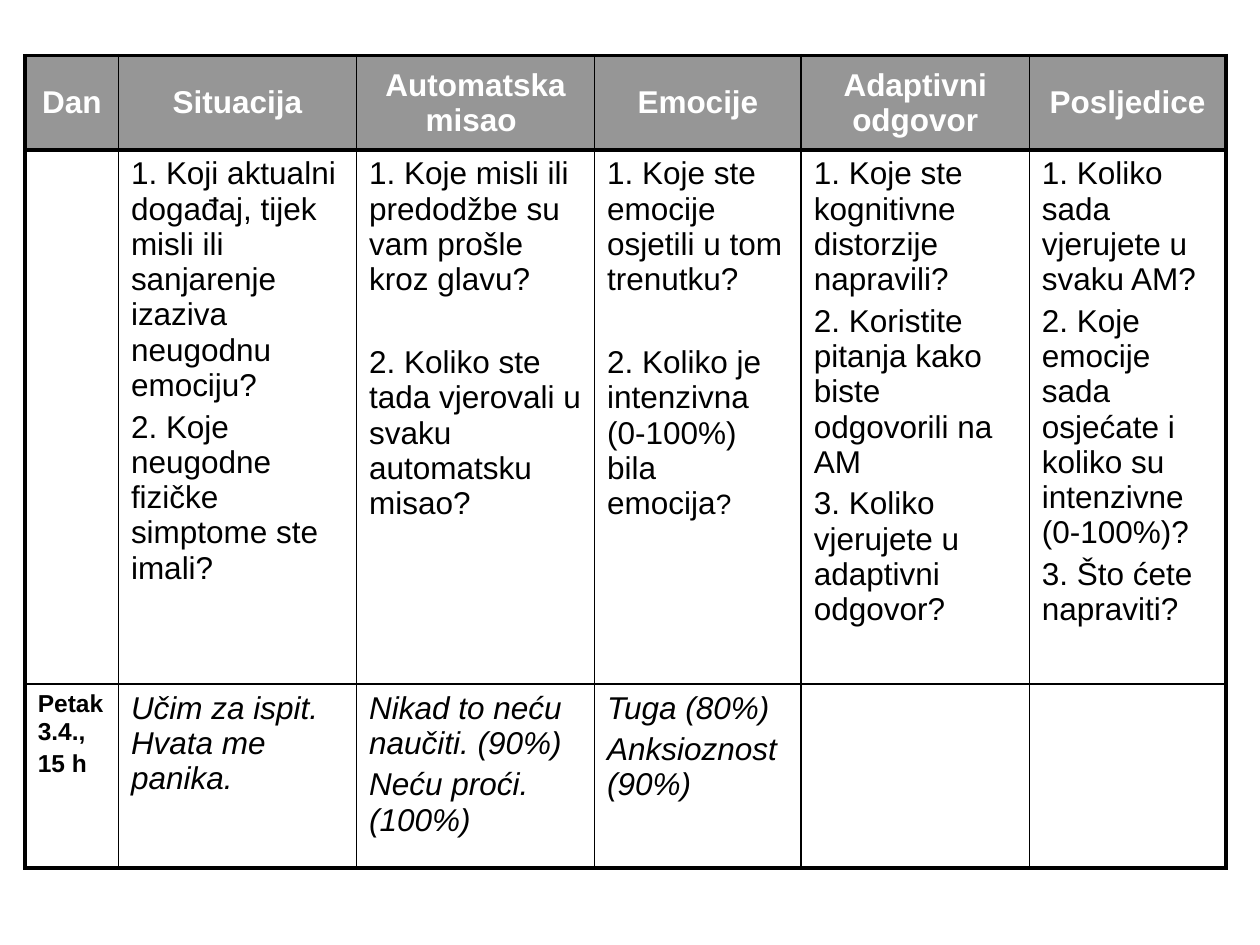
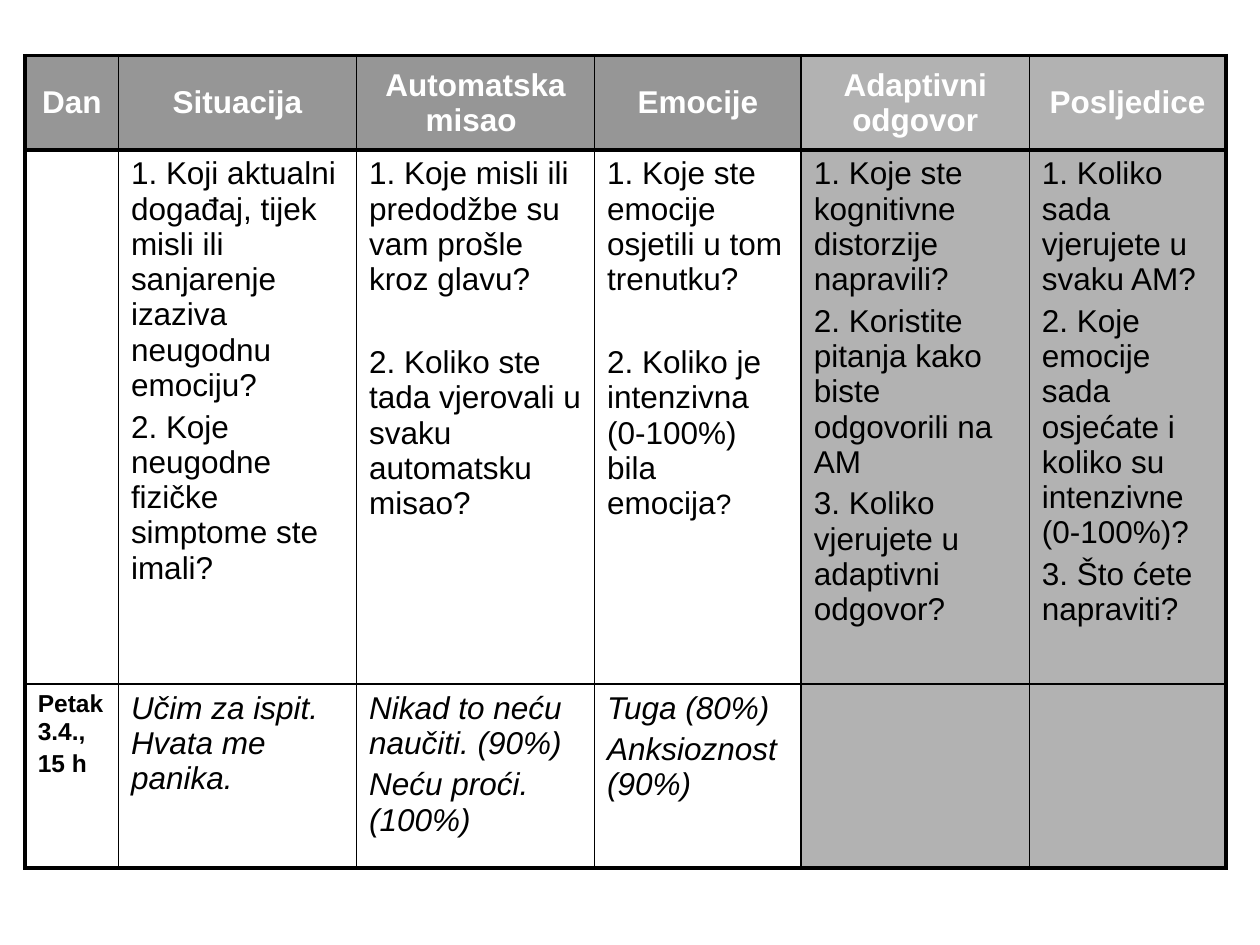
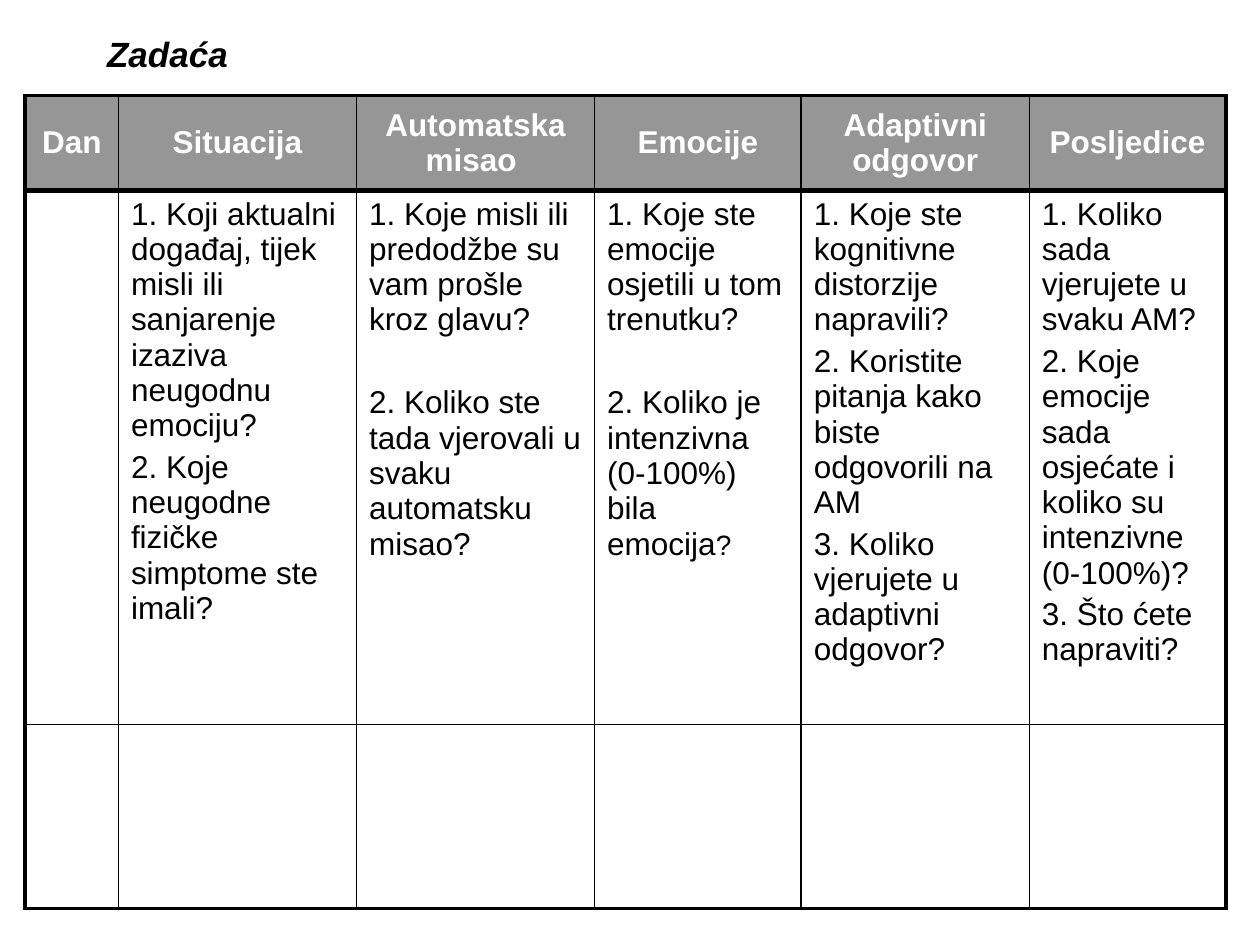
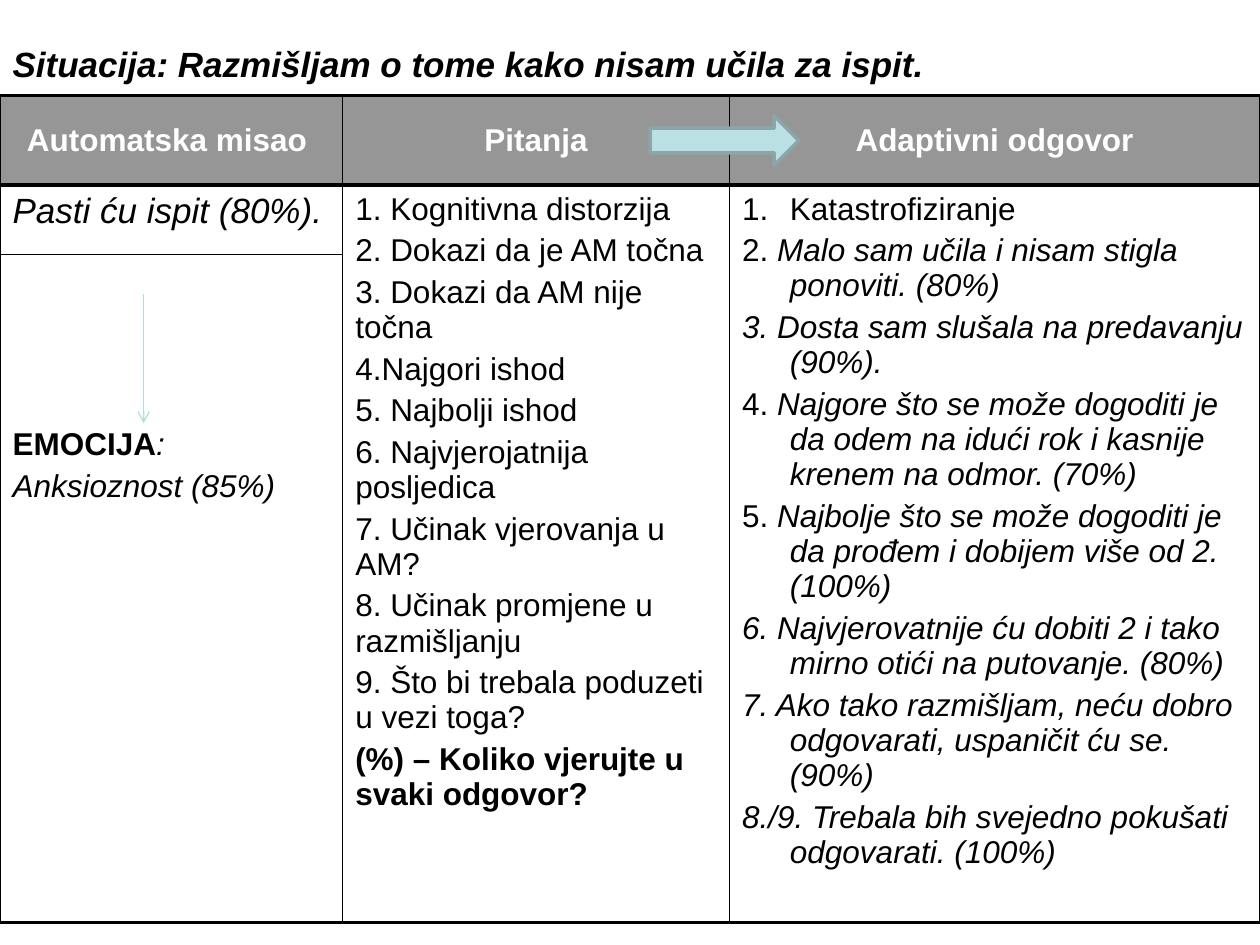
from dataclasses import dataclass
from typing import Optional

from lxml import etree
from pptx import Presentation
from pptx import util as u
from pptx.dml.color import RGBColor
from pptx.enum import shapes, text
from pptx.oxml import ns

# Shared look
COLORS = {
    "black": "000000",
    "white": "FFFFFF",
    "header": "969696",
    "shade": "B2B2B2",
    "arrow_fill": "BBE0E3",
    "arrow_edge": "8AA6A8",
    "thin_arrow": "B6DCDF",
}
FONT = "Arial"
TITLE_ONLY, BLANK = 5, 6
ROW_EDGES = (2.25, 3, 1, 2.25)  # horizontal rules from top to bottom, points
INNER_EDGE = 1
GAP = 27.3  # one skipped line between paragraphs, points
HANG = 0.38


@dataclass(frozen=True)
class Run:
    text: str
    size: float = 18
    bold: bool = False
    italic: bool = False
    color: str = "black"


@dataclass(frozen=True)
class Para:
    runs: tuple[Run, ...]
    before: Optional[float] = None
    hanging: bool = False
    numbered: bool = False
    centered: bool = False


Cell = tuple[Para, ...]


@dataclass(frozen=True)
class Grid:
    left: float
    top: float
    height: float
    cols: tuple[float, ...]
    rows: tuple[float, ...]
    cells: tuple[tuple[Cell, ...], ...]
    side_edge: float = INNER_EDGE
    shaded_cols: tuple[int, ...] = ()
    merged_cols: tuple[int, ...] = ()  # columns joined below the header


def para(content: str, before: Optional[float] = None, **fmt) -> Para:
    return Para((Run(content, **fmt),), before)


def lines(*contents: str, **fmt) -> Cell:
    return tuple(para(c, **fmt) for c in contents)


def header(*names: str) -> tuple[Cell, ...]:
    return tuple((Para((Run(n, bold=True, color="white"),), centered=True),) for n in names)


def answer(number: str, content: str) -> Para:
    """Hanging answer with an upright number and italic wording."""
    return Para((Run(number), Run(content, italic=True)), hanging=True)


def italic_answer(content: str) -> Para:
    return Para((Run(content, italic=True),), hanging=True)


def rgb(name: str) -> RGBColor:
    return RGBColor.from_string(COLORS[name])


# Text
def write(tf, paras: Cell) -> None:
    for i, item in enumerate(paras):
        p = tf.paragraphs[0] if i == 0 else tf.add_paragraph()
        p.alignment = text.PP_ALIGN.CENTER if item.centered else text.PP_ALIGN.LEFT
        before = 0.2 * item.runs[0].size if item.before is None else item.before
        p.space_before = u.Pt(before if i else 0)
        pPr = p._p.get_or_add_pPr()
        if item.hanging:
            pPr.set("marL", str(u.Inches(HANG)))
            pPr.set("indent", str(-u.Inches(HANG)))
        if item.numbered:
            etree.SubElement(pPr, ns.qn("a:buAutoNum"), type="arabicPeriod")
        for run in item.runs:
            r = p.add_run()
            r.text = run.text
            fmt = {"name": FONT, "size": u.Pt(run.size), "bold": run.bold, "italic": run.italic}
            for attr, value in fmt.items():
                setattr(r.font, attr, value)
            r.font.color.rgb = rgb(run.color)


def add_titled_slide(prs, title: str, left: float, top: float, width: float):
    s = prs.slides.add_slide(prs.slide_layouts[TITLE_ONLY])
    sp = s.shapes.title
    place = {"left": left, "top": top, "width": width, "height": 0.44}
    for attr, value in place.items():
        setattr(sp, attr, u.Inches(value))
    tf = sp.text_frame
    frame = {
        "word_wrap": True,
        "vertical_anchor": text.MSO_ANCHOR.TOP,
        "auto_size": text.MSO_AUTO_SIZE.SHAPE_TO_FIT_TEXT,
    }
    for attr, value in frame.items():
        setattr(tf, attr, value)
    write(tf, (para(title, size=20, bold=True, italic=True),))
    return s


# Tables
def set_borders(cell, widths: dict[str, float]) -> None:
    tcPr = cell._tc.get_or_add_tcPr()
    for side, width in widths.items():
        ln = etree.SubElement(tcPr, ns.qn(f"a:ln{side}"), w=str(u.Pt(width)))
        fill = etree.SubElement(ln, ns.qn("a:solidFill"))
        etree.SubElement(fill, ns.qn("a:srgbClr"), val=COLORS["black"])


def add_grid(s, grid: Grid):
    n_rows, n_cols = len(grid.rows), len(grid.cols)
    frame = s.shapes.add_table(
        n_rows, n_cols, u.Inches(grid.left), u.Inches(grid.top),
        u.Inches(sum(grid.cols)), u.Inches(grid.height),
    )
    table = frame.table
    table.first_row = table.horz_banding = False
    for col, width in zip(table.columns, grid.cols):
        col.width = u.Inches(width)
    for row, height in zip(table.rows, grid.rows):
        row.height = u.Inches(height)
    frame.height = u.Inches(grid.height)
    for c in grid.merged_cols:
        table.cell(1, c).merge(table.cell(n_rows - 1, c))

    for r in range(n_rows):
        for c in range(n_cols):
            cell = table.cell(r, c)
            last = r + (cell.span_height if cell.is_merge_origin else 1)
            widths = {
                "L": INNER_EDGE if c else grid.side_edge,
                "R": INNER_EDGE if c < n_cols - 1 else grid.side_edge,
                "T": ROW_EDGES[r],
                "B": ROW_EDGES[last],
            }
            if cell.is_spanned:
                del widths["T"]
            set_borders(cell, widths)
            if c in grid.shaded_cols or r == 0:
                cell.fill.solid()
                cell.fill.fore_color.rgb = rgb("shade" if c in grid.shaded_cols else "header")
            else:
                cell.fill.background()
            cell.vertical_anchor = text.MSO_ANCHOR.MIDDLE if r == 0 else text.MSO_ANCHOR.TOP
            if not cell.is_spanned:
                write(cell.text_frame, grid.cells[r][c])
    return table


# Thought record, used on three slides
RECORD_HEADER = header(
    "Dan", "Situacija", "Automatska misao ", "Emocije", "Adaptivni odgovor", "Posljedice"
)
RECORD_QUESTIONS = (
    (),
    lines(
        "1. Koji aktualni događaj, tijek misli ili sanjarenje izaziva neugodnu emociju?",
        "2. Koje neugodne fizičke simptome ste imali?",
    ),
    (
        para("1. Koje misli ili predodžbe su vam prošle kroz glavu?"),
        para("2. Koliko ste tada vjerovali u svaku automatsku misao?", before=GAP),
    ),
    (
        para("1. Koje ste emocije osjetili u tom trenutku?"),
        Para((Run("2. Koliko je intenzivna (0-100%) bila emocija"), Run("?", size=16)), before=GAP),
    ),
    lines(
        "1. Koje ste kognitivne distorzije napravili?",
        "2. Koristite pitanja kako biste odgovorili na AM",
        "3. Koliko vjerujete u adaptivni odgovor?",
    ),
    lines(
        "1. Koliko sada vjerujete u svaku AM?",
        "2. Koje emocije sada osjećate i koliko su intenzivne (0-100%)?",
        "3. Što ćete napraviti?",
    ),
)
RECORD_EXAMPLE = (
    lines("Petak 3.4.,", "15 h", size=14, bold=True),
    lines("Učim za ispit. Hvata me panika.", italic=True),
    lines("Nikad to neću naučiti. (90%)", "Neću proći. (100%)", italic=True),
    lines("Tuga (80%)", "Anksioznost (90%)", italic=True),
    (),
    (),
)
RECORD_EMPTY = ((),) * len(RECORD_HEADER)


def record(top: float, entry: tuple[Cell, ...], shaded_cols: tuple[int, ...] = ()) -> Grid:
    return Grid(
        left=0.2, top=top, height=6.46,
        cols=(0.74, 1.89, 1.89, 1.64, 1.81, 1.56),
        rows=(0.75, 4.24, 1.46),
        cells=(RECORD_HEADER, RECORD_QUESTIONS, entry),
        side_edge=2.25, shaded_cols=shaded_cols,
    )


# Worked example of the questions
QUESTIONS = lines(
    "1. Kognitivna distorzija",
    "2. Dokazi da je AM točna",
    "3. Dokazi da AM nije točna",
    "4.Najgori ishod",
    "5. Najbolji ishod",
    "6. Najvjerojatnija posljedica",
    "7. Učinak vjerovanja u AM?",
    "8. Učinak promjene u razmišljanju",
    "9. Što bi trebala poduzeti u vezi toga?",
) + lines("(%) – Koliko vjerujte u svaki odgovor?", bold=True)
ANSWERS = (
    Para((Run("Katastrofiziranje"),), hanging=True, numbered=True),
    answer("2. ", "Malo sam učila i nisam stigla ponoviti. (80%)"),
    italic_answer("3. Dosta sam slušala na predavanju (90%)."),
    answer("4. ", "Najgore što se može dogoditi je da odem na idući rok i kasnije "
                  "krenem na odmor. (70%)"),
    answer("5. ", "Najbolje što se može dogoditi je da prođem i dobijem više od 2. (100%)"),
    italic_answer("6. Najvjerovatnije ću dobiti 2 i tako mirno otići na putovanje. (80%)"),
    italic_answer("7. Ako tako razmišljam, neću dobro odgovarati, uspaničit ću se. (90%)"),
    italic_answer("8./9. Trebala bih svejedno pokušati odgovarati. (100%)"),
)
EMOTION = (
    Para((Run("EMOCIJA", bold=True), Run(":", italic=True))),
    para("Anksioznost (85%)", italic=True),
)
EXAMPLE = Grid(
    left=0, top=0.76, height=6.63,
    cols=(2.72, 3.07, 4.21),
    rows=(0.71, 0.55, 4.08),
    cells=(
        header("Automatska misao ", "Pitanja", "Adaptivni odgovor"),
        (lines("Pasti ću ispit (80%).", size=20, italic=True), QUESTIONS, ANSWERS),
        (EMOTION, (), ()),
    ),
    merged_cols=(1, 2),
)


# Arrows
def add_thin_arrow(s, x: float, top: float, bottom: float) -> None:
    line = s.shapes.add_connector(
        shapes.MSO_CONNECTOR.STRAIGHT,
        u.Inches(x), u.Inches(top), u.Inches(x), u.Inches(bottom),
    )
    line.line.color.rgb = rgb("thin_arrow")
    line.line.width = u.Pt(0.75)
    etree.SubElement(line.line._get_or_add_ln(), ns.qn("a:tailEnd"), type="arrow")
    etree.SubElement(line._element.spPr, ns.qn("a:effectLst"))


def add_block_arrow(s, left: float, top: float, width: float, height: float) -> None:
    sp = s.shapes.add_shape(
        shapes.MSO_SHAPE.RIGHT_ARROW,
        u.Inches(left), u.Inches(top), u.Inches(width), u.Inches(height),
    )
    sp.shadow.inherit = False
    sp.fill.solid()
    sp.fill.fore_color.rgb = rgb("arrow_fill")
    sp.line.color.rgb = rgb("arrow_edge")
    sp.line.width = u.Pt(2)


def main() -> None:
    prs = Presentation()
    prs.slide_width, prs.slide_height = u.Inches(10), u.Inches(7.5)

    # Filled record, first plain and then with the last columns shaded
    for shaded_cols in ((), (4, 5)):
        s = prs.slides.add_slide(prs.slide_layouts[BLANK])
        add_grid(s, record(0.44, RECORD_EXAMPLE, shaded_cols))

    # Homework
    s = add_titled_slide(prs, "Zadaća", 0.75, 0.21, 2.6)
    add_grid(s, record(0.76, RECORD_EMPTY))

    # Worked example
    s = add_titled_slide(prs, "Situacija: Razmišljam o tome kako nisam učila za ispit.", 0, 0.29, 10)
    table = add_grid(s, EXAMPLE)
    table.cell(2, 0).margin_top = u.Inches(1.37)  # room for the thin arrow
    add_thin_arrow(s, 1.14, 2.33, 3.36)
    add_block_arrow(s, 5.16, 0.92, 1.18, 0.39)

    prs.save("out.pptx")


if __name__ == "__main__":
    main()
